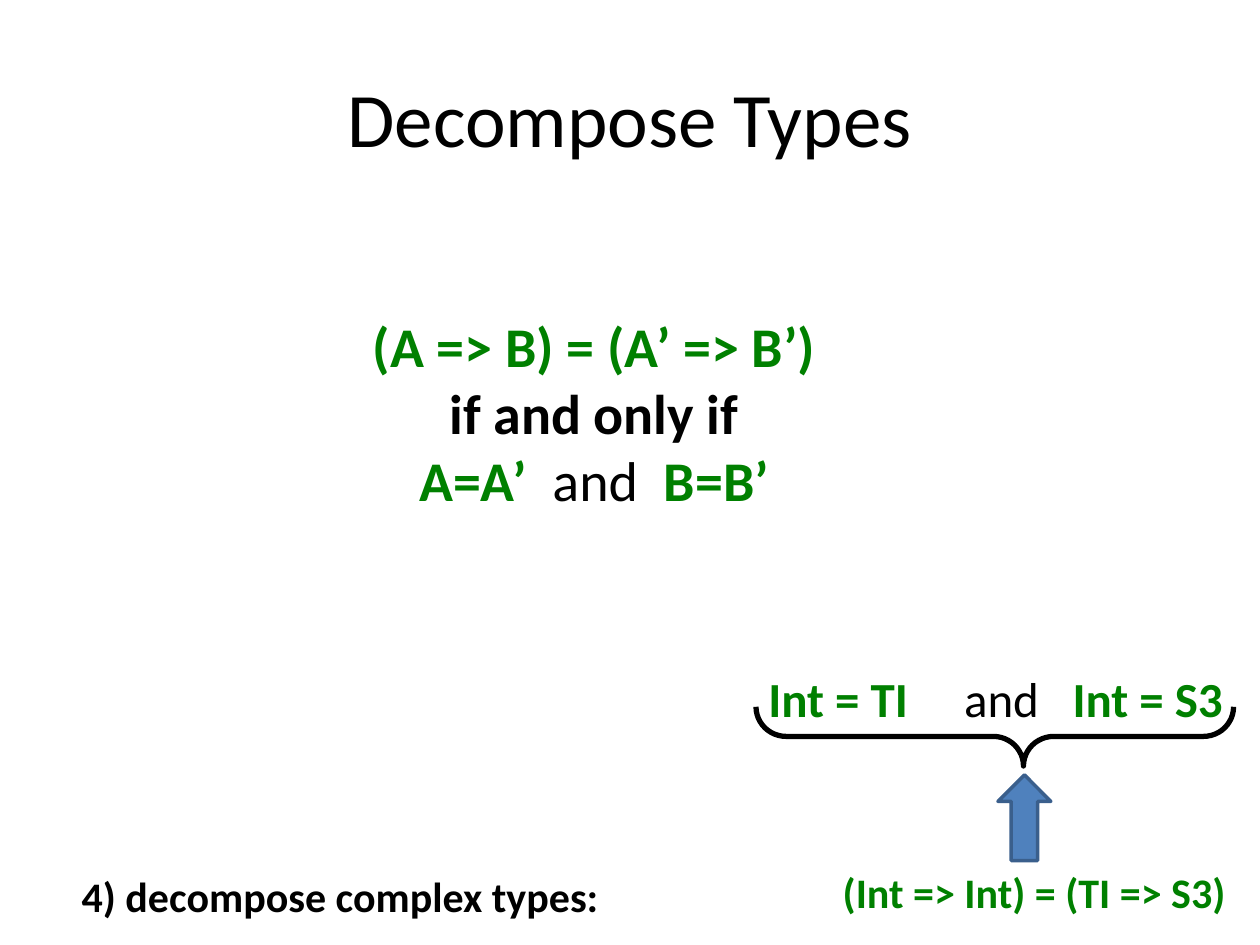
from dataclasses import dataclass
from typing import NamedTuple

import pptx
import pptx.dml.color
import pptx.enum.shapes
import pptx.enum.text
import pptx.util

SHAPE = pptx.enum.shapes.MSO_SHAPE
ALIGN = pptx.enum.text.PP_ALIGN
COLUMNS, ROWS = 100, 75


@dataclass(frozen=True)
class Theme:
    font: str = "Calibri"
    ink: str = "000000"
    formula: str = "008000"
    arrow: str = "4F81BD"
    arrow_edge: str = "3A5F8C"
    title: int = 44
    rule: int = 32
    result: int = 28
    step: int = 24
    space_em: float = 0.23  # width of a space, in ems


THEME = Theme()


class Area(NamedTuple):
    """Left, top, width and height in grid columns and rows."""
    column: float
    row: float
    columns: float
    rows: float


class Part(NamedTuple):
    """A run of text; gap widens it by that many spaces."""
    text: str
    color: str = THEME.formula
    bold: bool = True
    gap: int = 0


@dataclass(frozen=True)
class TextBlock:
    area: Area
    size: int
    lines: tuple[tuple[Part, ...], ...]
    align: ALIGN = ALIGN.LEFT
    wrap: bool = False


@dataclass(frozen=True)
class Figure:
    kind: SHAPE
    area: Area
    rotation: int
    edge: str
    edge_width: float
    fill: str | None = None
    adjustments: tuple[float, ...] = ()


deck = pptx.Presentation()
deck.slide_width = pptx.util.Inches(10)
deck.slide_height = pptx.util.Inches(7.5)


def rgb(color: str) -> pptx.dml.color.RGBColor:
    return pptx.dml.color.RGBColor.from_string(color)


def place(area: Area) -> dict[str, int]:
    across, down = deck.slide_width / COLUMNS, deck.slide_height / ROWS
    return {
        "left": int(area.column * across),
        "top": int(area.row * down),
        "width": int(area.columns * across),
        "height": int(area.rows * down),
    }


def apply(target, values: dict) -> None:
    for name, value in values.items():
        setattr(target, name, value)


def write(paragraph, part: Part, size: int) -> None:
    run = paragraph.add_run()
    run.text = part.text
    apply(run.font, {"name": THEME.font, "size": pptx.util.Pt(size), "bold": part.bold})
    run.font.color.rgb = rgb(part.color)
    if part.gap:
        spacing = round(part.gap * THEME.space_em * size * 100)
        run._r.get_or_add_rPr().set("spc", str(spacing))


def draw_text(shapes, block: TextBlock) -> None:
    frame = shapes.add_textbox(**place(block.area)).text_frame
    apply(frame, {
        "word_wrap": block.wrap,
        "auto_size": pptx.enum.text.MSO_AUTO_SIZE.SHAPE_TO_FIT_TEXT,
    })
    for index, line in enumerate(block.lines):
        paragraph = frame.add_paragraph() if index else frame.paragraphs[0]
        paragraph.alignment = block.align
        for part in line:
            write(paragraph, part, block.size)


def draw_figure(shapes, figure: Figure) -> None:
    shape = shapes.add_shape(figure.kind, **place(figure.area))
    shape.rotation = figure.rotation
    shape.shadow.inherit = False
    for index, value in enumerate(figure.adjustments):
        shape.adjustments[index] = value
    if figure.fill:
        shape.fill.solid()
        shape.fill.fore_color.rgb = rgb(figure.fill)
    else:
        shape.fill.background()
    shape.line.color.rgb = rgb(figure.edge)
    shape.line.width = pptx.util.Pt(figure.edge_width)


def conjunction(left: str, right: str, before: int, after: int) -> tuple[Part, ...]:
    """Two equations joined by a plain 'and', with widened spaces around it."""
    return (
        Part(left),
        Part(" ", gap=before),
        Part("and", THEME.ink, False),
        Part(" ", gap=after),
        Part(right),
    )


RULE = TextBlock(Area(28.4, 24.2, 37.5, 17.2), THEME.rule, (
    (Part("(A => B) = (A’ => B’)"),),
    (Part("if and only if", THEME.ink),),
    conjunction("A=A’", "B=B’", 1, 1),
), ALIGN.CENTER)
EQUATION = TextBlock(Area(65.9, 68.3, 32.7, 5), THEME.step,
                     ((Part("(Int => Int) = (TI => S3)"),),))
STEP = TextBlock(Area(5.5, 68.6, 50.3, 5), THEME.step,
                 ((Part("4) decompose complex types:", THEME.ink),),), wrap=True)
RESULT = TextBlock(Area(60, 52.6, 38.7, 5.7), THEME.result,
                   (conjunction("Int = TI", "Int = S3", 4, 2),))
ARROW = Figure(SHAPE.DOWN_ARROW, Area(79.2, 61.5, 4.2, 6.8), 180,
               THEME.arrow_edge, 2, THEME.arrow)
BRACE = Figure(SHAPE.RIGHT_BRACE, Area(76.6, 39.5, 4.7, 37.9), 90,
               THEME.ink, 3, adjustments=(0.51, 0.44))


def main() -> None:
    slide = deck.slides.add_slide(deck.slide_layouts[5])

    # Title
    title = slide.shapes.title
    apply(title, place(Area(5, 3, 90, 12.5)))
    title.text_frame.vertical_anchor = pptx.enum.text.MSO_ANCHOR.MIDDLE
    heading = title.text_frame.paragraphs[0]
    heading.alignment = ALIGN.CENTER
    write(heading, Part("Decompose Types", THEME.ink, False), THEME.title)

    # Rule and the step that applies it
    for block in (EQUATION, STEP, RULE):
        draw_text(slide.shapes, block)
    draw_figure(slide.shapes, ARROW)

    # Braced result
    braced = slide.shapes.add_group_shape().shapes
    draw_text(braced, RESULT)
    draw_figure(braced, BRACE)

    deck.save("out.pptx")


if __name__ == "__main__":
    main()
